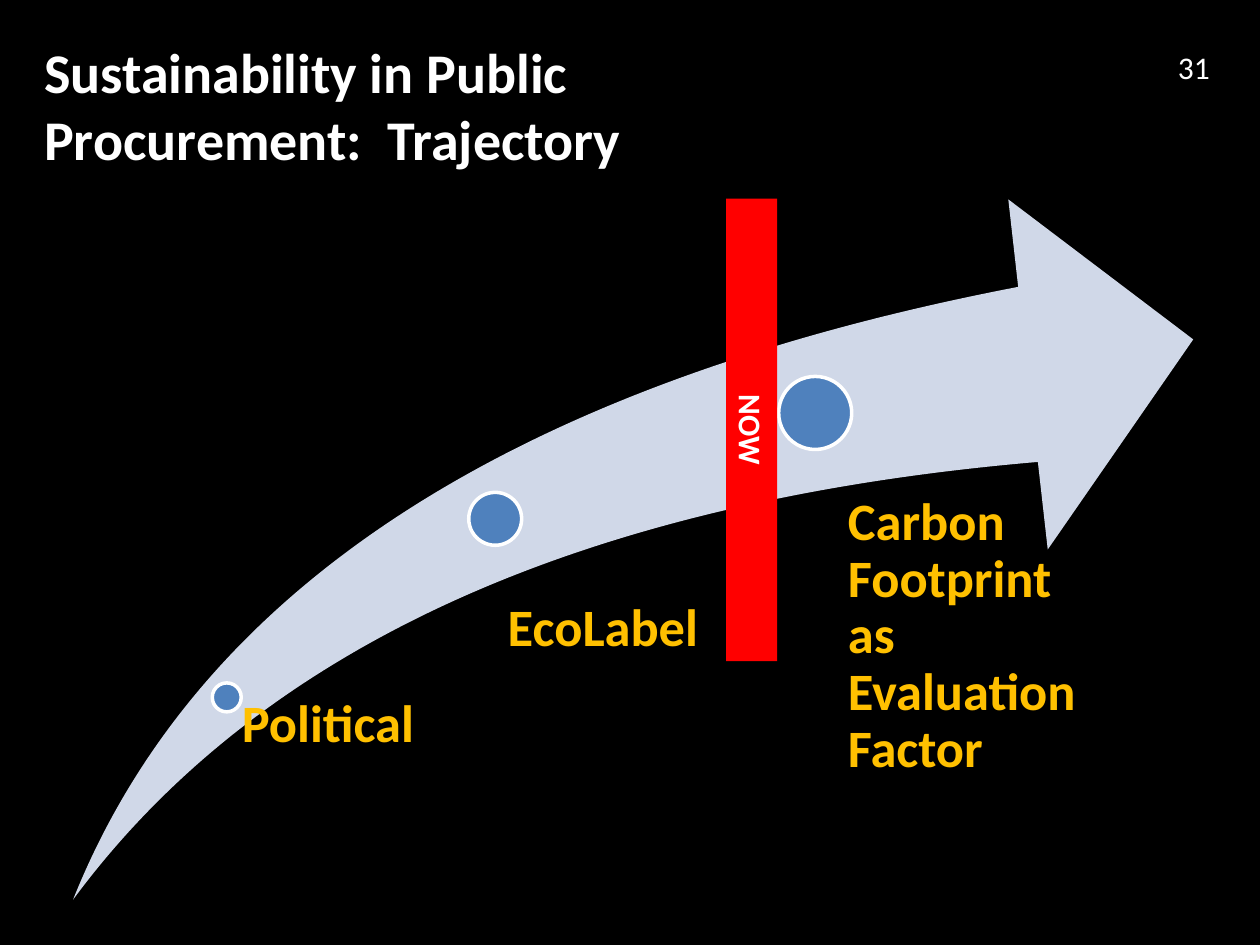
"""Build the procurement trajectory slide with a rising arrow and three milestones."""
from pptx import Presentation
from pptx.dml.color import RGBColor
from pptx.enum.shapes import MSO_SHAPE
from pptx.enum.text import MSO_ANCHOR, PP_ALIGN
from pptx.util import Inches, Pt

COLORS = {
    "background": "000000", "arrow": "D0D8E8", "dot": "4F81BD",
    "text": "FFFFFF", "label": "FFC000", "now": "FF0000",
}

presentation = Presentation()
presentation.slide_width = Inches(10)
presentation.slide_height = Inches(7.5)
column = presentation.slide_width / 100
row = presentation.slide_height / 100
slide = presentation.slides.add_slide(presentation.slide_layouts[5])
slide.background.fill.solid()
slide.background.fill.fore_color.rgb = RGBColor.from_string(COLORS["background"])


def add_filled(preset, left, top, width, height, color):
    shape = slide.shapes.add_shape(preset, int(left), int(top), int(width), int(height))
    shape.shadow.inherit = False
    shape.fill.solid()
    shape.fill.fore_color.rgb = RGBColor.from_string(COLORS[color])
    shape.line.fill.background()
    return shape


def write(shape, text, size, color, bold=True, align=PP_ALIGN.LEFT, anchor=MSO_ANCHOR.TOP):
    text_frame = shape.text_frame
    text_frame.text = text
    text_frame.word_wrap = True
    text_frame.vertical_anchor = anchor
    paragraph = text_frame.paragraphs[0]
    paragraph.alignment = align
    font = paragraph.runs[0].font
    font.name, font.size, font.bold = "Calibri", Pt(size), bold
    font.color.rgb = RGBColor.from_string(COLORS[color])
    return text_frame


number = slide.shapes.add_textbox(
    int(92.5 * column), int(4.4 * row), int(5 * column), int(5.4 * row))
write(number, "31", 18, "text", bold=False)

arrow = add_filled(MSO_SHAPE.SWOOSH_ARROW, 5.8 * column, 21.1 * row,
                   88.9 * column, 74.1 * row, "arrow")
arrow.adjustments[0] = 0.25
arrow.adjustments[1] = 0.25

milestones = [
    ("Political", 18, 73.8, 2.3, 18, 73.8, 1.2),
    ("EcoLabel", 39.3, 54.9, 4.2, 38.1, 63.6, 2.2),
    ("Carbon Footprint as Evaluation Factor", 64.7, 43.7, 5.8, 64.2, 52.4, 3.1),
]
for text, center_x, center_y, size, left, top, inset in milestones:
    diameter = size * column
    dot = add_filled(MSO_SHAPE.OVAL, center_x * column - diameter / 2,
                     center_y * row - diameter / 2, diameter, diameter, "dot")
    dot.line.color.rgb = RGBColor.from_string(COLORS["text"])
    dot.line.width = Pt(2)
    label = slide.shapes.add_textbox(int(left * column), int(top * row),
                                     int(21.3 * column), int((95.2 - top) * row))
    text_frame = write(label, text, 30, "label")
    text_frame.margin_left = int(inset * column)
    text_frame.margin_top = text_frame.margin_right = text_frame.margin_bottom = 0
    text_frame.paragraphs[0].line_spacing = 0.9

title = slide.shapes.title
title.left, title.top = int(2.5 * column), int(3.33 * row)
title.width, title.height = int(52.5 * column), int(15.7 * row)
write(title, "Sustainability in Public Procurement:  Trajectory", 32, "text")

now = add_filled(MSO_SHAPE.RECTANGLE, 41.3 * column, 42.8 * row,
                 36.7 * column, 5.4 * row, "now")
now.rotation = 90
write(now, "NOW", 18, "text", align=PP_ALIGN.CENTER, anchor=MSO_ANCHOR.MIDDLE)

presentation.save("out.pptx")
